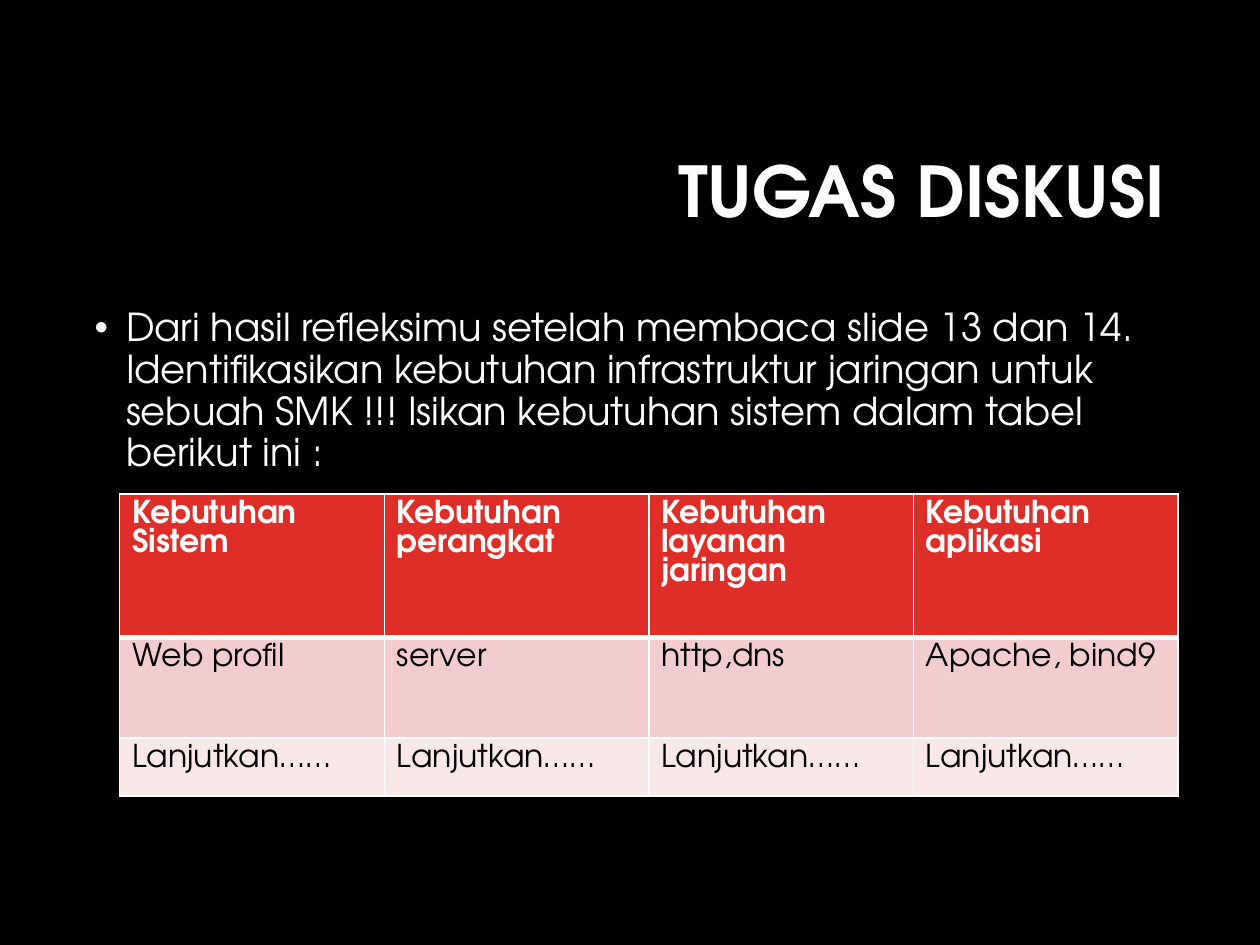
import pptx
import pptx.dml.color
import pptx.enum.text
import pptx.oxml.ns
import pptx.util
from lxml import etree

Pt = pptx.util.Pt
COLORS = {"background": "000000", "light": "FFFFFF", "dark": "000000",
          "header": "DF2E28", "band": "F3CDCD", "plain": "F9E8E8"}
ROWS = [
    ["Kebutuhan Sistem", "Kebutuhan perangkat", "Kebutuhan layanan jaringan",
     "Kebutuhan aplikasi"],
    ["Web profil", "server", "http,dns", "Apache, bind9"],
    ["Lanjutkan……"] * 4,
]


def rgb(name):
    return pptx.dml.color.RGBColor.from_string(COLORS[name])


def add_element(parent, tag, **attributes):
    return etree.SubElement(parent, pptx.oxml.ns.qn(tag), attributes)


class SlideBuilder:
    """Holds the text style and the current slide."""
    font_name = "TeX Gyre Adventor"

    def __init__(self, presentation):
        self.slide = presentation.slides.add_slide(presentation.slide_layouts[1])
        fill = self.slide.background.fill
        fill.solid()
        fill.fore_color.rgb = rgb("background")

    def style(self, paragraph, size, color="light", bold=False, spacing=0.9):
        paragraph.line_spacing = spacing
        paragraph.space_before = Pt(0)
        font = paragraph.font
        font.name, font.size, font.bold = self.font_name, Pt(size), bold
        font.color.rgb = rgb(color)

    def place(self, shape, text, left, top, width, height):
        """Move a placeholder, fill it and return its paragraph."""
        shape.left, shape.top = Pt(left), Pt(top)
        shape.width, shape.height = Pt(width), Pt(height)
        frame = shape.text_frame
        frame.text = text
        frame.word_wrap = True
        frame.auto_size = pptx.enum.text.MSO_AUTO_SIZE.NONE
        return frame.paragraphs[0]

    def title(self, text, *box):
        shape = self.slide.shapes.title
        paragraph = self.place(shape, text, *box)
        shape.text_frame.vertical_anchor = pptx.enum.text.MSO_ANCHOR.MIDDLE
        paragraph.alignment = pptx.enum.text.PP_ALIGN.RIGHT
        self.style(paragraph, 40, bold=True)

    def bullet(self, text, *box):
        paragraph = self.place(self.slide.placeholders[1], text, *box)
        properties = paragraph._p.get_or_add_pPr()
        properties.set("marL", str(Pt(18)))
        properties.set("indent", str(-Pt(18)))
        add_element(properties, "a:buFont", typeface="Arial")
        add_element(properties, "a:buChar", char="•")
        self.style(paragraph, 22)

    def borders(self, cell, **widths):
        properties = cell._tc.get_or_add_tcPr()
        for position, (side, width) in enumerate(widths.items()):
            line = etree.Element(pptx.oxml.ns.qn(f"a:ln{side}"), w=str(Pt(width)))
            fill = add_element(line, "a:solidFill")
            add_element(fill, "a:srgbClr", val=COLORS["light"])
            properties.insert(position, line)

    def table(self, rows, row_heights, left, top, width):
        columns = len(rows[0])
        table = self.slide.shapes.add_table(
            len(rows), columns, Pt(left), Pt(top), Pt(width),
            Pt(sum(row_heights))).table
        for column in table.columns:
            column.width = Pt(width / columns)
        fills = ["header", "band", "plain"]
        for index, (texts, height) in enumerate(zip(rows, row_heights)):
            table.rows[index].height = Pt(height)
            is_header = index == 0
            for column, text in enumerate(texts):
                cell = table.cell(index, column)
                cell.text = text
                cell.fill.solid()
                cell.fill.fore_color.rgb = rgb(fills[index])
                self.style(cell.text_frame.paragraphs[0], 18,
                           "light" if is_header else "dark", is_header, 1.0)
                self.borders(cell, L=1, R=1, T=3 if index == 1 else 1,
                             B=3 if is_header else 1)


def main():
    presentation = pptx.Presentation()
    presentation.slide_width, presentation.slide_height = Pt(720), Pt(540)
    builder = SlideBuilder(presentation)
    builder.title("TUGAS DISKUSI", 171.4, 60.5, 501.8, 101.5)
    builder.bullet(
        "Dari hasil refleksimu setelah membaca slide 13 dan 14. "
        "Identifikasikan kebutuhan infrastruktur jaringan untuk sebuah SMK !!! "
        "Isikan kebutuhan sistem dalam tabel berikut ini :",
        46.8, 172.8, 626.4, 320.4)
    builder.table(ROWS, [82, 57.6, 33.2], 68.4, 282.2, 604.8)
    presentation.save("out.pptx")


if __name__ == "__main__":
    main()
